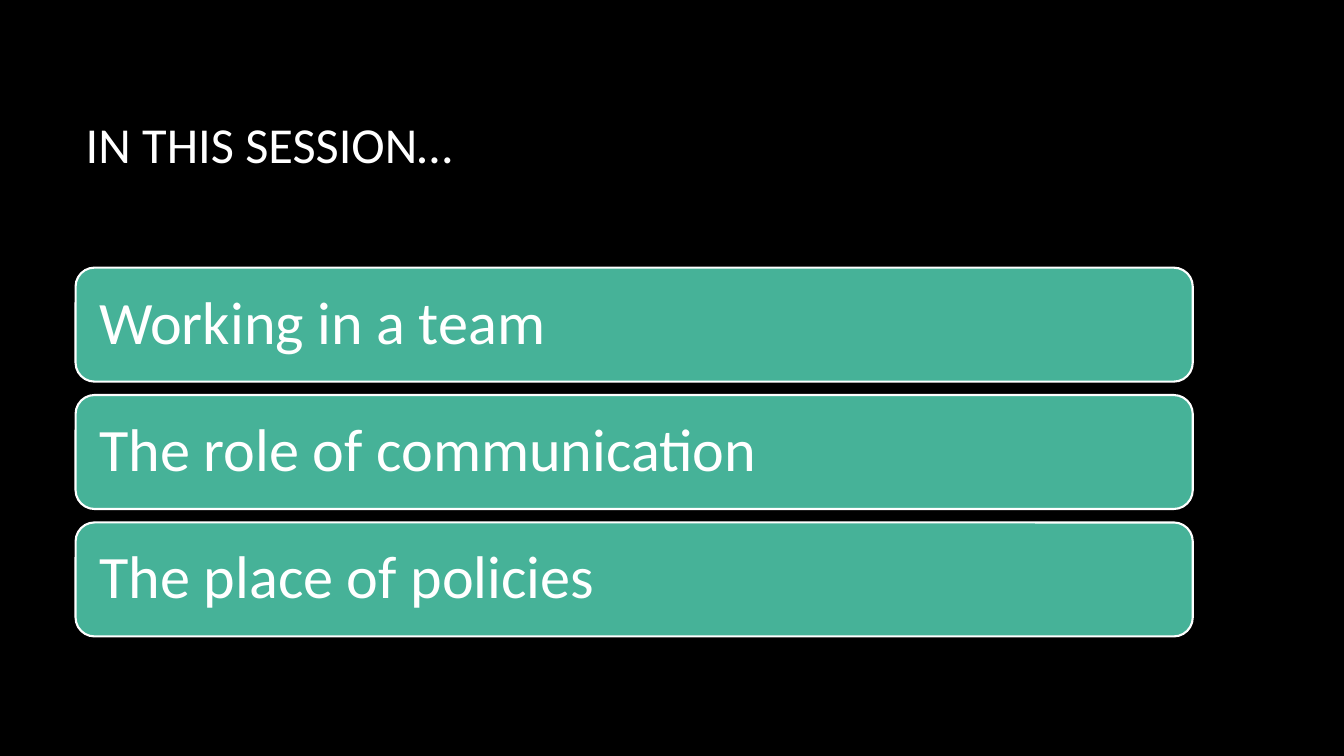
from pptx import Presentation
from pptx.dml.color import RGBColor
from pptx.enum.shapes import MSO_SHAPE
from pptx.enum.text import MSO_ANCHOR, MSO_AUTO_SIZE, PP_ALIGN
from pptx.util import Pt

ROUND = MSO_SHAPE.ROUNDED_RECTANGLE
MIDDLE = MSO_ANCHOR.MIDDLE
LEFT = PP_ALIGN.LEFT
NO_FIT = MSO_AUTO_SIZE.NONE

# Content
TITLE = "IN THIS SESSION…"
TOPICS = ["Working in a team", "The role of communication", "The place of policies"]

# Style and layout, in points
COLORS = {"back": "000000", "text": "FFFFFF", "bar": "46B298"}
FONT = "Calibri"
EDGE, WIDTH = 54, 798
TOP, HEIGHT, STEP = 191.2, 81.4, 91


def color(name):
    return RGBColor.from_string(COLORS[name])


def write(shape, text, size, pad=7.2, pad_y=3.6, spacing=0.9):
    frame = shape.text_frame
    frame.text = text
    frame.word_wrap = True
    frame.auto_size = NO_FIT
    frame.vertical_anchor = MIDDLE
    frame.margin_left = frame.margin_right = Pt(pad)
    frame.margin_top = frame.margin_bottom = Pt(pad_y)
    para = frame.paragraphs[0]
    para.alignment = LEFT
    para.line_spacing = spacing
    font = para.runs[0].font
    font.name, font.size = FONT, Pt(size)
    font.color.rgb = color("text")


# Slide
deck = Presentation()
deck.slide_width, deck.slide_height = Pt(960), Pt(540)
slide = deck.slides.add_slide(deck.slide_layouts[5])
slide.background.fill.solid()
slide.background.fill.fore_color.rgb = color("back")

# Title
title = slide.shapes.title
title.left, title.top = Pt(EDGE), Pt(48)
title.width, title.height = Pt(WIDTH), Pt(114.5)
write(title, TITLE, 36)

# Topic bars
for i, topic in enumerate(TOPICS):
    bar = slide.shapes.add_shape(
        ROUND, Pt(EDGE), Pt(TOP + i * STEP), Pt(WIDTH), Pt(HEIGHT))
    bar.shadow.inherit = False
    bar.fill.solid()
    bar.fill.fore_color.rgb = color("bar")
    bar.line.color.rgb = color("text")
    bar.line.width = Pt(1.5)
    write(bar, topic, 43, pad=13, pad_y=13)

deck.save("out.pptx")
